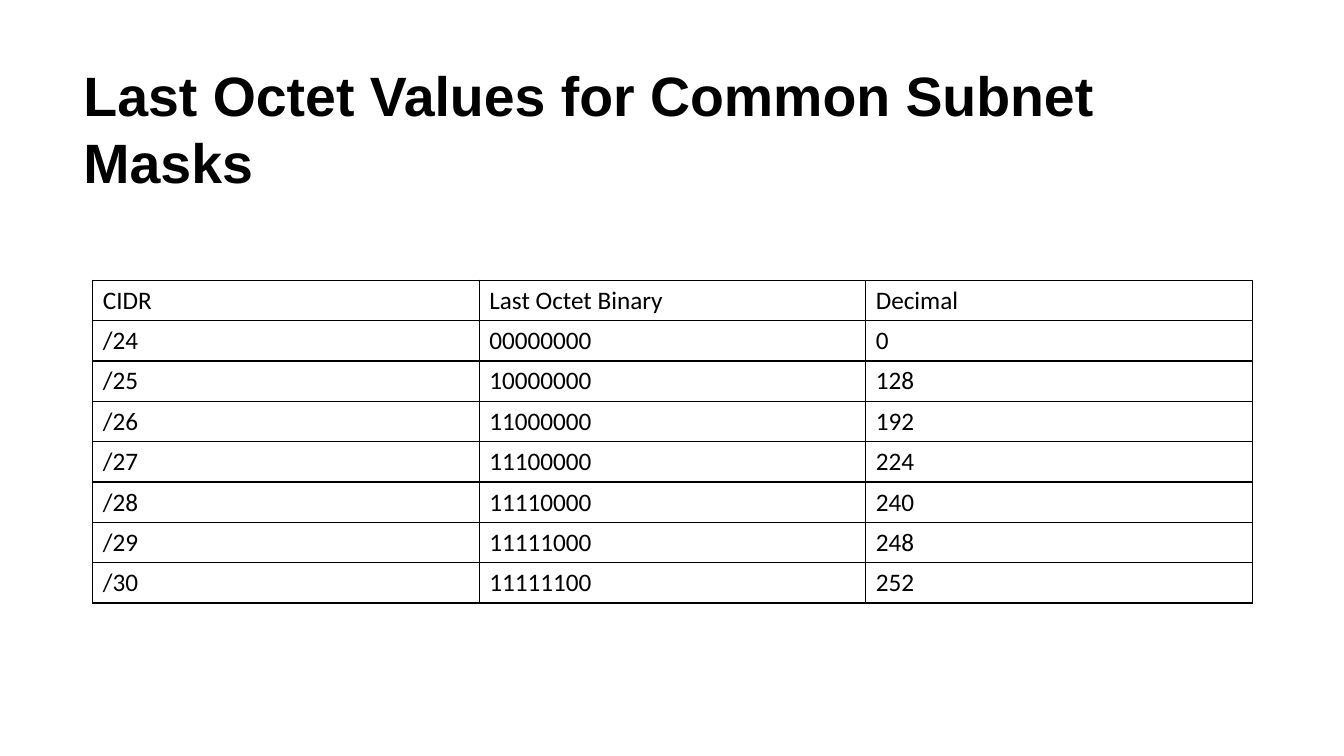
from lxml import etree
from pptx import Presentation
from pptx import util as u
from pptx.dml.color import RGBColor
from pptx.enum import text
from pptx.oxml import ns

BLACK = RGBColor(0, 0, 0)
TITLE = {"name": "Arial", "size": u.Pt(39.6), "bold": True}
BODY = {"name": "Calibri", "size": u.Pt(18), "bold": False}
HEADS = ("CIDR", "Last Octet Binary", "Decimal")


class Deck:
    def __init__(self):
        self.file = Presentation()
        self.file.slide_width = u.Inches(13.33)
        self.file.slide_height = u.Inches(7.5)
        self.slide = self.file.slides.add_slide(self.file.slide_layouts[6])

    def label(self, para, words, form):
        run = para.add_run()
        run.text = words
        for key, value in form.items():
            setattr(run.font, key, value)
        run.font.color.rgb = BLACK

    def title(self, words, *area):
        frame = self.slide.shapes.add_textbox(*map(u.Inches, area)).text_frame
        form = {
            "word_wrap": True,
            "vertical_anchor": text.MSO_ANCHOR.BOTTOM,
            "margin_bottom": u.Inches(0.72),
        }
        for key, value in form.items():
            setattr(frame, key, value)
        self.label(frame.paragraphs[0], words, TITLE)

    def border(self, cell):
        props = cell._tc.get_or_add_tcPr()
        for index, side in enumerate(("lnL", "lnR", "lnT", "lnB")):
            line = etree.Element(ns.qn(f"a:{side}"), w=str(u.Pt(1)))
            fill = etree.SubElement(line, ns.qn("a:solidFill"))
            etree.SubElement(fill, ns.qn("a:srgbClr"), val=str(BLACK))
            props.insert(index, line)

    def table(self, rows, *area):
        size = len(rows), len(rows[0])
        table = self.slide.shapes.add_table(*size, *map(u.Inches, area)).table
        table.first_row = table.horz_banding = False
        for r, row in enumerate(rows):
            for c, words in enumerate(row):
                cell = table.cell(r, c)
                cell.fill.background()
                cell.vertical_anchor = text.MSO_ANCHOR.MIDDLE
                self.label(cell.text_frame.paragraphs[0], words, BODY)
                self.border(cell)


def main():
    deck = Deck()
    deck.title("Last Octet Values for Common Subnet Masks", 0.73, 1.2, 11.5, 1.45)
    rows = [HEADS]
    for bits in range(24, 31):
        octet = 256 - 2 ** (32 - bits)
        rows.append((f"/{bits}", f"{octet:08b}", str(octet)))
    deck.table(rows, 0.92, 2.78, 11.5, 3.2)
    deck.file.save("out.pptx")


if __name__ == "__main__":
    main()
